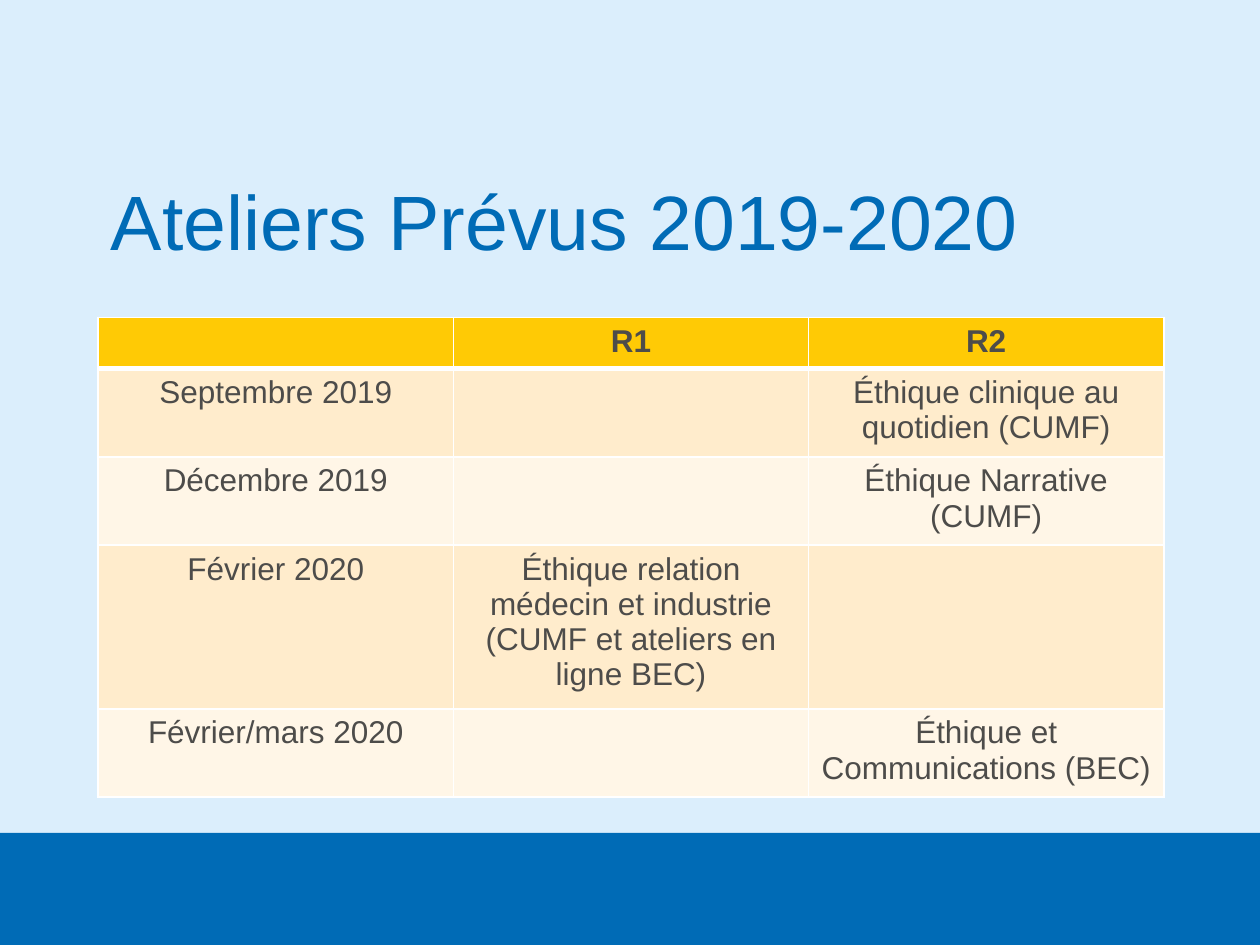
import pptx
import pptx.util
import pptx.dml.color
import pptx.enum.shapes
import pptx.enum.text
import pptx.oxml.ns
from lxml import etree
from pptx.util import Cm, Pt

RGBColor = pptx.dml.color.RGBColor
PALE_BLUE = RGBColor(0xDB, 0xEE, 0xFC)
BLUE = RGBColor(0x00, 0x6B, 0xB6)
YELLOW = RGBColor(0xFF, 0xCA, 0x05)
SAND = RGBColor(0xFF, 0xEC, 0xCC)
CREAM = RGBColor(0xFF, 0xF6, 0xE7)
GREY = RGBColor(0x4D, 0x4C, 0x4A)
WHITE = RGBColor(0xFF, 0xFF, 0xFF)

FONT = "Arial"
WORKSHOPS = [
    ("", "R1", "R2"),
    ("Septembre 2019", "", "Éthique clinique au quotidien (CUMF)"),
    ("Décembre 2019", "", "Éthique Narrative (CUMF)"),
    ("Février 2020",
     "Éthique relation médecin et industrie (CUMF et ateliers en ligne BEC)", ""),
    ("Février/mars 2020", "", "Éthique et Communications (BEC)"),
]
ROW_HEIGHTS = [1.03, 1.78, 1.78, 3.3, 1.78]


def add_run(p, text, size, color, bold=False):
    r = p.add_run()
    r.text = text
    r.font.name = FONT
    r.font.size = Pt(size)
    r.font.bold = bold
    r.font.color.rgb = color


def add_band(slide):
    sp = slide.shapes.add_shape(pptx.enum.shapes.MSO_SHAPE.RECTANGLE,
                                0, Cm(16.79), Cm(25.4), Cm(2.26))
    sp.shadow.inherit = False
    sp.fill.solid()
    sp.fill.fore_color.rgb = BLUE
    sp.line.fill.background()


def set_title(slide, text):
    sp = slide.shapes.title
    sp.left, sp.top, sp.width, sp.height = Cm(1.98), Cm(1.78), Cm(21.46), Cm(3.73)
    tf = sp.text_frame
    tf.word_wrap = True
    tf.vertical_anchor = pptx.enum.text.MSO_ANCHOR.BOTTOM
    p = tf.paragraphs[0]
    p.alignment = pptx.enum.text.PP_ALIGN.LEFT
    p.line_spacing = 0.9
    add_run(p, text, 44, BLUE)


def set_border(cell, side, width):
    tc_pr = cell._tc.get_or_add_tcPr()
    qn = pptx.oxml.ns.qn
    ln = etree.SubElement(tc_pr, qn(f"a:ln{side}"), w=str(Pt(width)))
    fill = etree.SubElement(ln, qn("a:solidFill"))
    etree.SubElement(fill, qn("a:srgbClr"), val=str(WHITE))


def format_cell(cell, text, row):
    """Style a cell by its row: yellow header, then alternating bands."""
    for side in "LRTB":
        under_header = (row, side) in ((0, "B"), (1, "T"))
        set_border(cell, side, 3 if under_header else 1)
    cell.fill.solid()
    cell.fill.fore_color.rgb = YELLOW if row == 0 else SAND if row % 2 else CREAM
    p = cell.text_frame.paragraphs[0]
    p.alignment = pptx.enum.text.PP_ALIGN.CENTER
    if text:
        add_run(p, text, 18, GREY, bold=row == 0)


def add_workshop_table(slide):
    frame = slide.shapes.add_table(len(WORKSHOPS), 3, Cm(1.98), Cm(6.4),
                                   Cm(21.48), Cm(sum(ROW_HEIGHTS)))
    table = frame.table
    for col in table.columns:
        col.width = Cm(7.16)
    for i, (texts, height) in enumerate(zip(WORKSHOPS, ROW_HEIGHTS)):
        table.rows[i].height = Cm(height)
        for j, text in enumerate(texts):
            format_cell(table.cell(i, j), text, i)


def main():
    prs = pptx.Presentation()
    prs.slide_width, prs.slide_height = Cm(25.4), Cm(19.05)
    slide = prs.slides.add_slide(prs.slide_layouts[5])
    slide.background.fill.solid()
    slide.background.fill.fore_color.rgb = PALE_BLUE
    add_band(slide)
    add_workshop_table(slide)
    set_title(slide, "Ateliers Prévus 2019-2020")
    prs.save("out.pptx")


if __name__ == "__main__":
    main()
